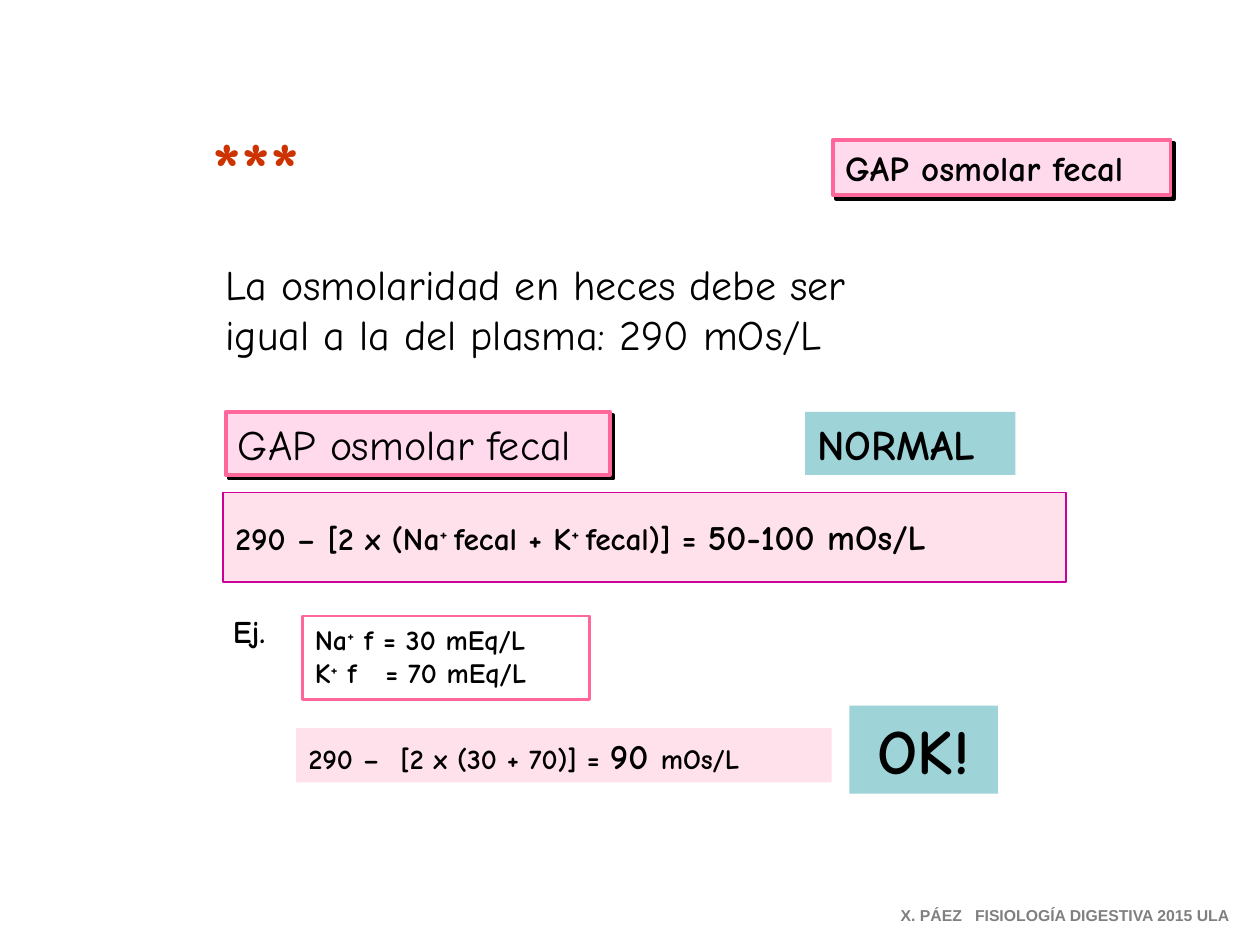
"""Build the slide on the normal fecal osmolar gap."""
from lxml.etree import SubElement
from pptx import Presentation
from pptx.dml.color import RGBColor
from pptx.enum.shapes import MSO_SHAPE
from pptx.enum.text import MSO_ANCHOR, PP_ALIGN
from pptx.oxml import parse_xml
from pptx.oxml.ns import nsdecls, qn
from pptx.util import Inches, Pt

COLORS = {
    "ink": "000000", "pink": "FFD9EC", "rose": "FFE1EB", "border": "FF6699",
    "magenta": "CC0099", "teal": "9ED3D7", "red": "CC3300", "gray": "808080",
}
SHADOW = (
    f'<a:effectLst {nsdecls("a")}><a:outerShdw dist="35921" dir="2700000" algn="ctr" '
    f'rotWithShape="0"><a:srgbClr val="{COLORS["ink"]}"/></a:outerShdw></a:effectLst>'
)

deck = Presentation()
deck.slide_width, deck.slide_height = Inches(10), Inches(7.5)
slide = deck.slides.add_slide(deck.slide_layouts[6])


def add_text(lines, at, size, bold=True, color="ink", font="Comic Neue", fill=None,
             line=None, weight=0, shadow=False, text_shadow=False,
             align=PP_ALIGN.LEFT, top=0.05, tab=None):
    """Add a block whose lines are lists of (text, format) runs."""
    place = [Inches(length) for length in at]
    if fill or line:
        block = slide.shapes.add_shape(MSO_SHAPE.RECTANGLE, *place)
        block.shadow.inherit = False
    else:
        block = slide.shapes.add_textbox(*place)
    if fill:
        block.fill.solid()
        block.fill.fore_color.rgb = RGBColor.from_string(COLORS[fill])
    else:
        block.fill.background()
    if line:
        block.line.color.rgb = RGBColor.from_string(COLORS[line])
        block.line.width = Pt(weight)
    else:
        block.line.fill.background()
    if shadow:
        properties = block._element.spPr
        properties.replace(properties.find(qn("a:effectLst")), parse_xml(SHADOW))
    frame = block.text_frame
    frame.word_wrap = True
    frame.vertical_anchor = MSO_ANCHOR.TOP
    frame.margin_top = Inches(top)
    for index, pieces in enumerate(lines):
        paragraph = frame.add_paragraph() if index else frame.paragraphs[0]
        paragraph.alignment = align
        if tab:
            stops = SubElement(paragraph._p.get_or_add_pPr(), qn("a:tabLst"))
            SubElement(stops, qn("a:tab"), pos=str(Inches(tab)), algn="l")
        for words, style in pieces:
            run = paragraph.add_run()
            run.text = words
            run.font.size = Pt(style.get("size", size))
            run.font.bold = bold
            run.font.name = font
            run.font.color.rgb = RGBColor.from_string(COLORS[color])
            if style.get("raised"):
                run.font._element.set("baseline", "30000")
            if text_shadow:
                run.font._element.find(qn("a:latin")).addprevious(parse_xml(SHADOW))


RAISED = {"raised": True}
LARGER = {"size": 20}
gap_label = [[("GAP osmolar fecal", {})]]
gap_style = {"fill": "pink", "line": "border", "weight": 2.25, "shadow": True}

add_text(gap_label, (1.79, 3.27, 3.05, 0.5), 24, bold=False, **gap_style)
add_text([[("290 – [2 x (Na", {}), ("+ ", RAISED), ("fecal + K", {}), ("+ ", RAISED),
           ("fecal)] = ", {}), ("50-100 mOs/L", LARGER)]],
         (1.77, 3.91, 6.69, 0.71), 18, fill="rose", line="magenta", weight=0.75, top=0.18)
add_text([[("Na", {}), ("+", RAISED), (" f = 30 mEq/L", {})],
          [("K", {}), ("+", RAISED), (" f\t= 70 mEq/L", {})]],
         (2.4, 4.89, 2.28, 0.66), 16, line="border", weight=1.5, tab=0.56)
add_text([[("La osmolaridad en heces debe ser", {})],
          [("igual a la del plasma: 290 mOs/L", {})]],
         (1.69, 2, 5.56, 0.91), 24, bold=False)
add_text([[("290 –\t[2 x (30 + 70)] = ", {}), ("90 ", LARGER), ("mOs/L", {})]],
         (2.35, 5.78, 4.25, 0.43), 16, fill="rose", tab=0.73)
add_text([[("OK!", {})]], (6.74, 5.6, 1.18, 0.7), 36, fill="teal", align=PP_ALIGN.CENTER)
add_text([[("Ej.", {})]], (1.75, 4.81, 0.57, 0.4), 18)
add_text([[("***", {})]], (1.32, 0.91, 1.42, 0.84), 44, color="red",
         text_shadow=True, align=PP_ALIGN.CENTER)
add_text([[("NORMAL", {})]], (6.39, 3.27, 1.67, 0.5), 24, fill="teal")
add_text(gap_label, (6.61, 1.11, 2.68, 0.44), 20, **gap_style)
add_text([[("X. PÁEZ\tFISIOLOGÍA DIGESTIVA 2015 ULA", {})]],
         (7.05, 7.14, 2.84, 0.25), 9, color="gray", font="Arial", tab=0.59)

deck.save("out.pptx")
